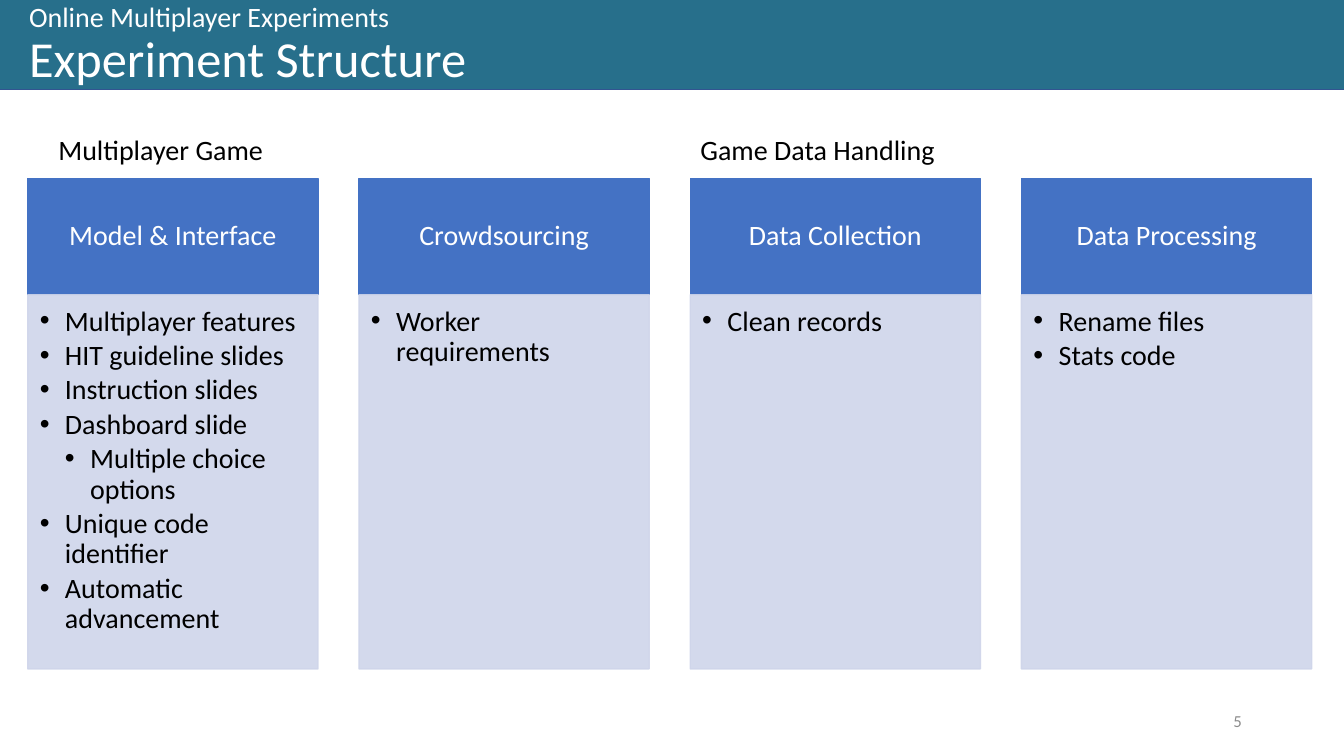
from pptx import Presentation
from pptx.dml.color import RGBColor
from pptx.enum.shapes import MSO_SHAPE
from pptx.enum.text import MSO_ANCHOR, PP_ALIGN
from pptx.oxml.ns import qn
from pptx.util import Pt
from lxml.etree import SubElement

# Content
TITLE = [("Online Multiplayer Experiments", 20), ("Experiment Structure", 36)]
PAGE = "5"
GROUPS = [(34.56, "Multiplayer Game"), (493.2, "Game Data Handling")]
COLUMNS = [  # heading, then (level, bullet) pairs
    ("Model & Interface", [
        (1, "Multiplayer features"),
        (1, "HIT guideline slides"),
        (1, "Instruction slides"),
        (1, "Dashboard slide"),
        (2, "Multiple choice options"),
        (1, "Unique code identifier"),
        (1, "Automatic advancement"),
    ]),
    ("Crowdsourcing", [(1, "Worker requirements")]),
    ("Data Collection", [(1, "Clean records")]),
    ("Data Processing", [(1, "Rename files"), (1, "Stats code")]),
]

# Colours
WHITE = RGBColor(0xFF, 0xFF, 0xFF)
BLACK = RGBColor(0x00, 0x00, 0x00)
GREY = RGBColor(0x8C, 0x8C, 0x8C)
TEAL = RGBColor(0x27, 0x6F, 0x8B)
NAVY = RGBColor(0x32, 0x54, 0x91)
BLUE = RGBColor(0x44, 0x72, 0xC4)
PALE = RGBColor(0xCF, 0xD5, 0xEA)

# Column grid, in points
LEFT, PITCH, COL_W = 19.8, 236.6, 207.36
HEAD_TOP, HEAD_H = 127.6, 83
BODY_TOP, BODY_H = 210.6, 267.2
INDENT = 18

prs = Presentation()
prs.slide_width, prs.slide_height = Pt(960), Pt(540)
s = prs.slides.add_slide(prs.slide_layouts[6])


def add_rect(x, y, w, h, fill, line):
    sp = s.shapes.add_shape(MSO_SHAPE.RECTANGLE, Pt(x), Pt(y), Pt(w), Pt(h))
    sp.shadow.inherit = False
    sp.fill.solid()
    sp.fill.fore_color.rgb = fill
    sp.line.color.rgb = line
    sp.line.width = Pt(1)
    return sp


def add_box(x, y, w, h):
    return s.shapes.add_textbox(Pt(x), Pt(y), Pt(w), Pt(h))


def write(sp, lines, color=BLACK, size=20, align=PP_ALIGN.LEFT,
          anchor=MSO_ANCHOR.TOP, insets=(7.2, 3.6, 7.2, 3.6), spacing=0.9, after=0):
    """Each line is (text, size or None, bullet level or 0)."""
    tf = sp.text_frame
    tf.word_wrap = True
    tf.vertical_anchor = anchor
    tf.margin_left, tf.margin_top, tf.margin_right, tf.margin_bottom = map(Pt, insets)
    for i, (text, own_size, level) in enumerate(lines):
        p = tf.add_paragraph() if i else tf.paragraphs[0]
        p.alignment = align
        p.line_spacing = spacing
        p.space_after = Pt(after)
        r = p.add_run()
        r.text = text
        r.font.name = "Calibri"
        r.font.size = Pt(own_size or size)
        r.font.color.rgb = color
        if level:
            p.level = level - 1
            pPr = p._p.get_or_add_pPr()
            pPr.set("marL", str(Pt(INDENT * level)))
            pPr.set("indent", str(-Pt(INDENT)))
            SubElement(pPr, qn("a:buFont"), typeface="Arial")
            SubElement(pPr, qn("a:buChar"), char="•")


# Title band
add_rect(-0.7, -0.7, 961.4, 64.8, TEAL, NAVY)
write(add_box(13.68, 0, 828, 65.5), [(text, size, 0) for text, size in TITLE],
      color=WHITE, anchor=MSO_ANCHOR.MIDDLE, insets=(7.2, 0, 7.2, 0))

# Group labels
for x, label in GROUPS:
    write(add_box(x, 93.6, 326, 39), [(label, None, 0)])

# Columns
for i, (heading, bullets) in enumerate(COLUMNS):
    x = LEFT + i * PITCH
    head = add_rect(x, HEAD_TOP, COL_W, HEAD_H, BLUE, BLUE)
    write(head, [(heading, None, 0)], color=WHITE, align=PP_ALIGN.CENTER,
          anchor=MSO_ANCHOR.MIDDLE, insets=(11.5, 6.5, 11.5, 6.5))
    body = add_rect(x, BODY_TOP, COL_W, BODY_H, PALE, PALE)
    for clr in body._element.spPr.iter(qn("a:srgbClr")):
        SubElement(clr, qn("a:alpha"), val="90000")
    write(body, [(text, None, level) for level, text in bullets],
          insets=(8.6, 8.6, 11.5, 12.2), after=3)

# Page number
write(add_box(678.24, 500.4, 216, 28.8), [(PAGE, None, 0)], color=GREY, size=12,
      align=PP_ALIGN.RIGHT, anchor=MSO_ANCHOR.MIDDLE, spacing=1.0)

prs.save("out.pptx")
